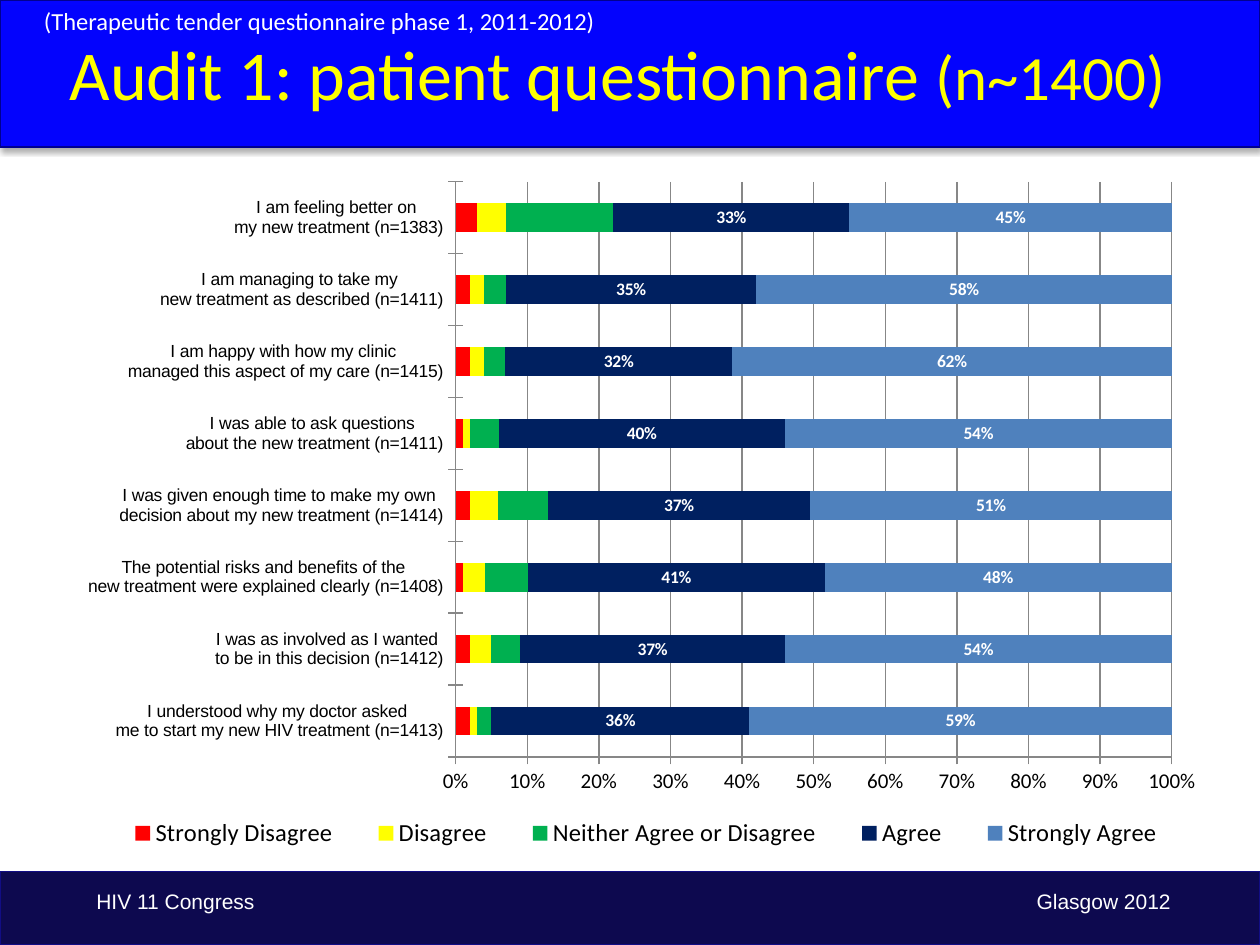
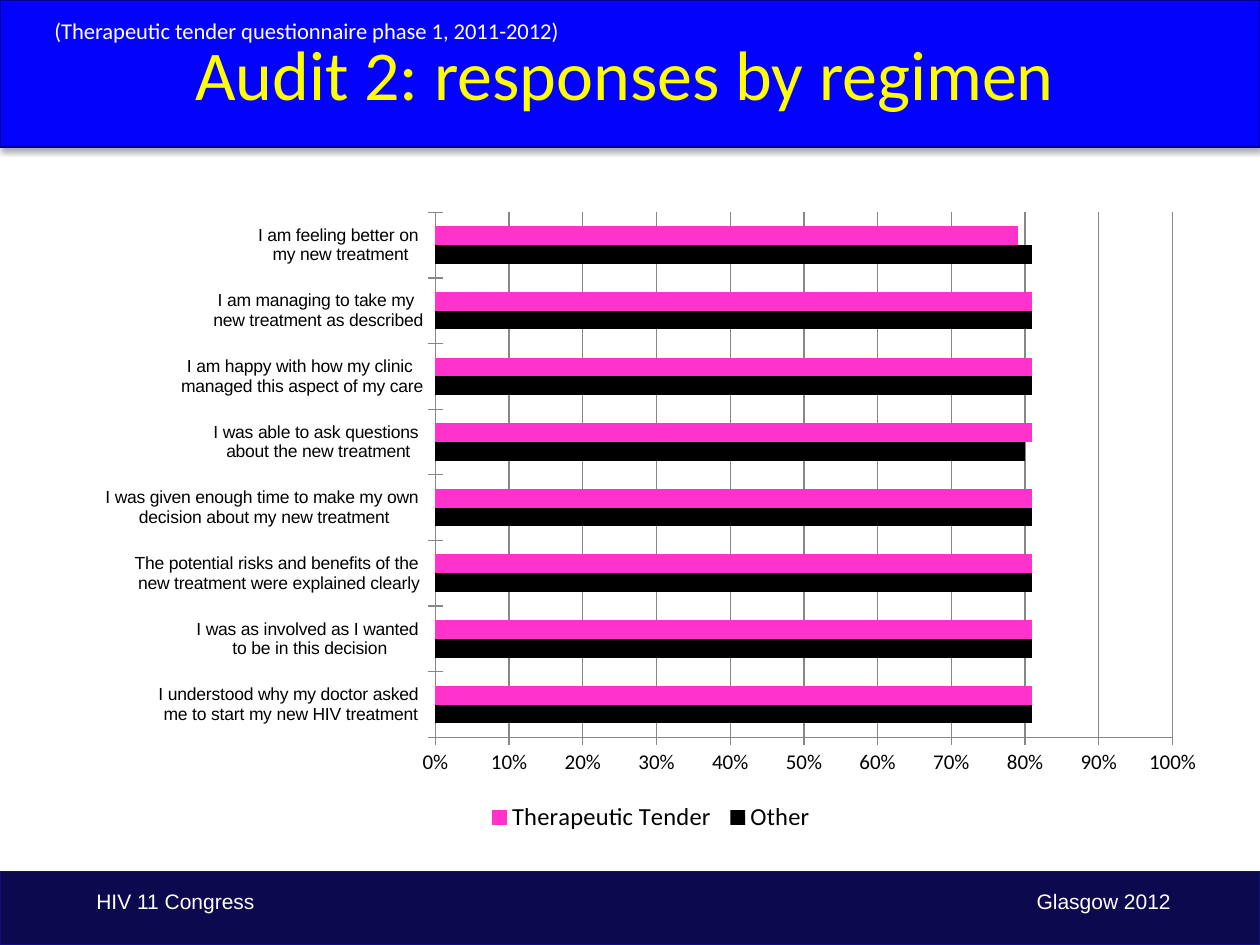
"""Build two slides on a patient questionnaire about HIV treatment."""
from lxml import etree
from pptx import Presentation
from pptx.chart.data import CategoryChartData
from pptx.dml.color import RGBColor
from pptx.enum.chart import XL_CHART_TYPE, XL_LEGEND_POSITION, XL_TICK_MARK
from pptx.enum.shapes import MSO_SHAPE
from pptx.enum.text import PP_ALIGN
from pptx.oxml import parse_xml
from pptx.oxml.ns import nsdecls, qn
from pptx.util import Pt

STACKED = XL_CHART_TYPE.BAR_STACKED_100
CLUSTERED = XL_CHART_TYPE.BAR_CLUSTERED
LEGEND_BOTTOM = XL_LEGEND_POSITION.BOTTOM
CROSS = XL_TICK_MARK.CROSS
RECTANGLE = MSO_SHAPE.RECTANGLE
LEFT, CENTER = PP_ALIGN.LEFT, PP_ALIGN.CENTER

WHITE = RGBColor(0xFF, 0xFF, 0xFF)
BLACK = RGBColor(0x00, 0x00, 0x00)
YELLOW = RGBColor(0xFF, 0xFF, 0x00)
RED = RGBColor(0xFF, 0x00, 0x00)
GREEN = RGBColor(0x00, 0xB0, 0x50)
NAVY = RGBColor(0x00, 0x20, 0x60)
STEEL = RGBColor(0x4F, 0x81, 0xBD)
PINK = RGBColor(0xFF, 0x33, 0xCC)
GRID_GRAY = RGBColor(0x87, 0x87, 0x87)
HEADER_BLUE = RGBColor(0x00, 0x00, 0xFF)
HEADER_LINE = RGBColor(0x00, 0x00, 0x90)
FOOTER_BLUE = RGBColor(0x0D, 0x09, 0x4F)
FOOTER_LINE = RGBColor(0x11, 0x0D, 0x84)

HEADING_FONT, BODY_FONT = "Calibri", "Arial"
WIDTH, HEIGHT = 720, 540
HEADER_HEIGHT, FOOTER_TOP = 84, 498
SOURCE = "(Therapeutic tender questionnaire phase 1, 2011-2012)"

QUESTIONS = [
    "I understood why my doctor asked \nme to start my new HIV treatment",
    "I was as involved as I wanted \nto be in this decision",
    "The potential risks and benefits of the \nnew treatment were explained clearly",
    "I was given enough time to make my own \ndecision about my new treatment",
    "I was able to ask questions \nabout the new treatment",
    "I am happy with how my clinic \nmanaged this aspect of my care",
    "I am managing to take my \nnew treatment as described",
    "I am feeling better on \nmy new treatment",
]
RESPONDENTS = [1413, 1412, 1408, 1414, 1411, 1415, 1411, 1383]
AGREEMENT = [
    ("Strongly Disagree", RED, [0.02, 0.02, 0.01, 0.02, 0.01, 0.02, 0.02, 0.03]),
    ("Disagree", YELLOW, [0.01, 0.03, 0.03, 0.04, 0.01, 0.02, 0.02, 0.04]),
    ("Neither Agree or Disagree", GREEN, [0.02, 0.04, 0.06, 0.07, 0.04, 0.03, 0.03, 0.15]),
    ("Agree", NAVY, [0.36, 0.37, 0.41, 0.37, 0.4, 0.32, 0.35, 0.33]),
    ("Strongly Agree", STEEL, [0.59, 0.54, 0.48, 0.51, 0.54, 0.62, 0.58, 0.45]),
]
REGIMENS = [
    ("Other", BLACK, [0.81, 0.81, 0.81, 0.81, 0.8, 0.81, 0.81, 0.81]),
    ("Therapeutic Tender", PINK, [0.81, 0.81, 0.81, 0.81, 0.81, 0.81, 0.81, 0.79]),
]


def set_font(font, size, color, name=HEADING_FONT, bold=False):
    """Set the size, colour, face and weight of a font."""
    font.size, font.name, font.bold = Pt(size), name, bold
    font.color.rgb = color


def add_text(slide, box, runs, color=WHITE, font=HEADING_FONT, align=LEFT):
    """Add a one-paragraph text box from (text, size) runs and return the paragraph."""
    frame = slide.shapes.add_textbox(*map(Pt, box)).text_frame
    frame.word_wrap = True
    paragraph = frame.paragraphs[0]
    paragraph.alignment = align
    for text, size in runs:
        run = paragraph.add_run()
        run.text = text
        set_font(run.font, size, color, font)
    return paragraph


def add_band(slide, top, height, fill, line, line_width):
    """Add a full-width band and return it."""
    band = slide.shapes.add_shape(RECTANGLE, 0, Pt(top), Pt(WIDTH), Pt(height))
    band.shadow.inherit = False
    band.fill.solid()
    band.fill.fore_color.rgb = fill
    band.line.color.rgb = line
    band.line.width = Pt(line_width)
    return band


def add_header(slide, title_runs, source_box, source_size):
    """Add the shadowed header band, the title and the source line."""
    band = add_band(slide, 0, HEADER_HEIGHT, HEADER_BLUE, HEADER_LINE, 0.75)
    properties = band.element.spPr
    color = properties.find(qn("a:solidFill"))[0]
    etree.SubElement(color, qn("a:alpha"), val="98000")
    properties.find(qn("a:effectLst")).append(parse_xml(
        f'<a:outerShdw {nsdecls("a")} blurRad="{Pt(3.1)}" dist="{Pt(1.8)}" '
        'dir="5400000" rotWithShape="0"><a:srgbClr val="000000">'
        '<a:alpha val="35000"/></a:srgbClr></a:outerShdw>'))
    add_text(slide, (12, 14, 690, 70), title_runs, color=YELLOW, align=CENTER)
    add_text(slide, source_box, [(SOURCE, source_size)])


def add_footer(slide):
    """Add the footer band with the event on the left and the place on the right."""
    add_band(slide, FOOTER_TOP, HEIGHT - FOOTER_TOP, FOOTER_BLUE, FOOTER_LINE, 1)
    paragraph = add_text(slide, (48, 504, 632, 36),
                         [("HIV 11 Congress\tGlasgow 2012", 12)], font=BODY_FONT)
    tabs = etree.SubElement(paragraph._p.get_or_add_pPr(), qn("a:tabLst"))
    etree.SubElement(tabs, qn("a:tab"), pos=str(Pt(614)), algn="r")


def make_layout(x, y, w, h, inner=False):
    """Return a manual chart layout given as fractions of the chart."""
    target = '<c:layoutTarget val="inner"/>' if inner else ""
    modes = '<c:xMode val="edge"/><c:yMode val="edge"/>'
    sizes = "".join(f'<c:{key} val="{value}"/>'
                    for key, value in zip("xywh", (x, y, w, h)))
    return parse_xml(f'<c:layout {nsdecls("c")}><c:manualLayout>{target}{modes}'
                     f'{sizes}</c:manualLayout></c:layout>')


def place_chart_parts(chart, plot_box, legend_box):
    """Fix where the plot and the legend sit inside the chart."""
    for layout in chart.element.xpath("c:chart/c:plotArea/c:layout | c:chart/c:legend/c:layout"):
        layout.getparent().remove(layout)
    chart.element.xpath("c:chart/c:plotArea")[0].insert(0, make_layout(*plot_box, inner=True))
    chart.element.xpath("c:chart/c:legend/c:legendPos")[0].addnext(make_layout(*legend_box))


def style_axis(axis, size, font):
    """Give an axis its font, grey line and crossing ticks."""
    set_font(axis.tick_labels.font, size, BLACK, font)
    axis.major_tick_mark = CROSS
    axis.format.line.color.rgb = GRID_GRAY
    axis.format.line.width = Pt(0.75)


def add_bar_chart(slide, kind, box, categories, series_rows, plot_box, legend_box, labelled=()):
    """Add a percentage bar chart and return it."""
    data = CategoryChartData(number_format="0%")
    data.categories = categories
    for name, _, values in series_rows:
        data.add_series(name, values)
    chart = slide.shapes.add_chart(kind, *map(Pt, box), data).chart
    chart.has_title = False
    set_font(chart.font, 10, BLACK)
    plot = chart.plots[0]
    plot.gap_width = 150
    plot.overlap = 100 if kind == STACKED else 0
    plot.vary_by_categories = False
    for series, (name, color, _) in zip(plot.series, series_rows):
        series.format.fill.solid()
        series.format.fill.fore_color.rgb = color
        series.invert_if_negative = False
        if name in labelled:
            labels = series.data_labels
            labels.show_value = True
            labels.number_format, labels.number_format_is_linked = "0%", False
            set_font(labels.font, 10, WHITE, bold=True)
    style_axis(chart.category_axis, 10, BODY_FONT)
    value_axis = chart.value_axis
    style_axis(value_axis, 12, HEADING_FONT)
    value_axis.tick_labels.number_format = "0%"
    value_axis.tick_labels.number_format_is_linked = False
    value_axis.has_major_gridlines = True
    value_axis.major_gridlines.format.line.color.rgb = GRID_GRAY
    value_axis.major_gridlines.format.line.width = Pt(0.75)
    chart.has_legend = True
    chart.legend.position = LEGEND_BOTTOM
    chart.legend.include_in_layout = False
    set_font(chart.legend.font, 14, BLACK)
    place_chart_parts(chart, plot_box, legend_box)
    return chart


def build_questionnaire_slide(slide):
    """Show how strongly patients agreed with each statement."""
    add_header(slide, [("Audit 1: patient questionnaire ", 40), ("(n~1400) ", 36)],
               (18, 0, 708, 24), 14)
    add_footer(slide)
    categories = [f"{question} (n={count})"
                  for question, count in zip(QUESTIONS, RESPONDENTS)]
    add_bar_chart(slide, STACKED, (36, 96, 660, 396), categories, AGREEMENT,
                  (0.34, 0.02, 0.62, 0.83), (0.03, 0.93, 0.95, 0.06),
                  labelled=("Agree", "Strongly Agree"))


def build_regimen_slide(slide):
    """Compare the responses of the two regimen groups."""
    add_header(slide, [("Audit 2: responses by regimen", 40)], (24, 6, 318, 30), 12.9)
    add_footer(slide)
    chart = add_bar_chart(slide, CLUSTERED, (48, 114, 648, 366), QUESTIONS, REGIMENS,
                          (0.31, 0.02, 0.65, 0.82), (0.35, 0.94, 0.3, 0.06))
    chart.value_axis.minimum_scale = 0
    chart.value_axis.maximum_scale = 1


def main():
    """Build and save the presentation."""
    presentation = Presentation()
    presentation.slide_width, presentation.slide_height = Pt(WIDTH), Pt(HEIGHT)
    blank = presentation.slide_layouts[6]
    for build_slide in (build_questionnaire_slide, build_regimen_slide):
        build_slide(presentation.slides.add_slide(blank))
    presentation.save("out.pptx")


if __name__ == "__main__":
    main()
